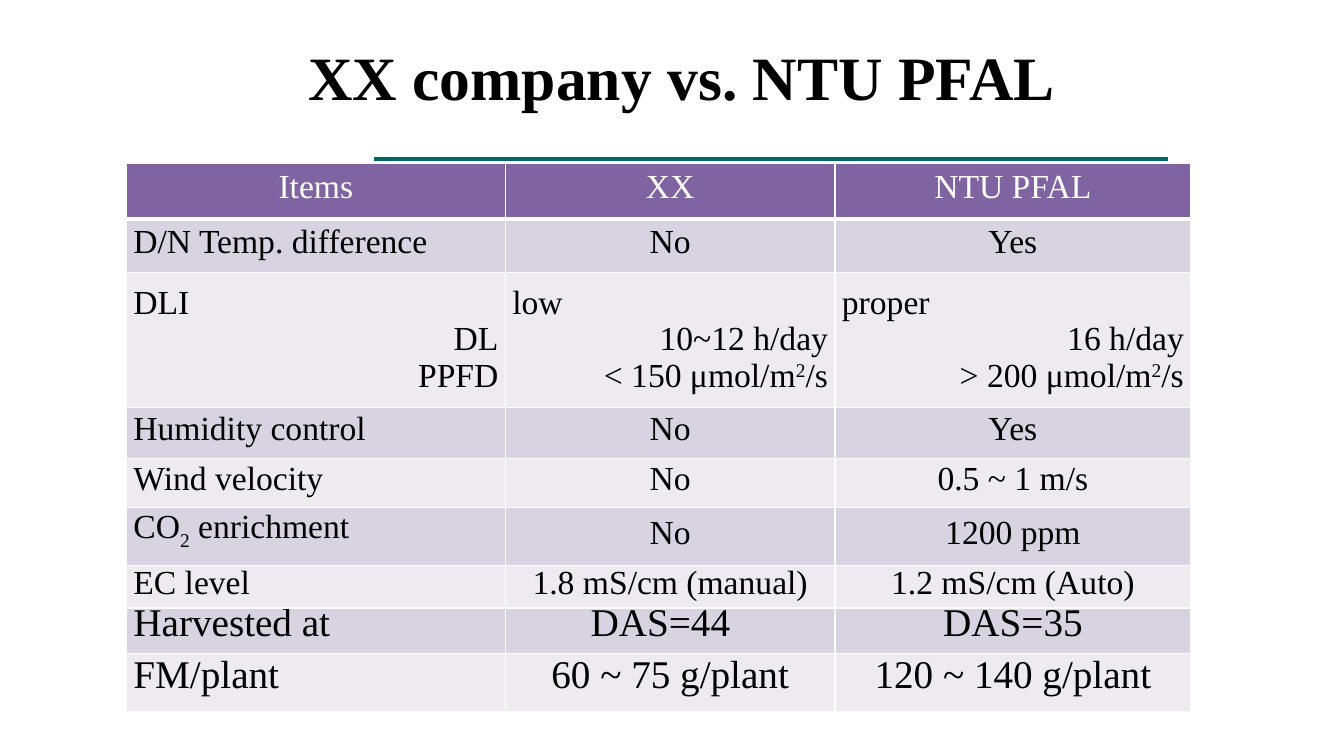
"""Build a slide comparing the growing conditions of XX company and NTU PFAL."""
import itertools

import lxml.etree
import pptx
import pptx.dml.color
import pptx.enum.shapes
import pptx.enum.text
import pptx.oxml
import pptx.oxml.ns
import pptx.util

Pt = pptx.util.Pt
RGBColor = pptx.dml.color.RGBColor
ALIGN = pptx.enum.text.PP_ALIGN
MIDDLE = pptx.enum.text.MSO_ANCHOR.MIDDLE

BLACK = RGBColor(0x00, 0x00, 0x00)
WHITE = RGBColor(0xFF, 0xFF, 0xFF)
TEAL = RGBColor(0x00, 0x66, 0x66)
PURPLE = RGBColor(0x80, 0x64, 0xA2)
LILAC = RGBColor(0xD8, 0xD3, 0xE0)
PALE_LILAC = RGBColor(0xED, 0xEA, 0xF0)

FONT = "Times New Roman"
SHIFTED = {"²": ("2", "30000"), "₂": ("2", "-25000")}
COLUMN_WIDTHS = [270.7, 235.4, 254.2]
ROWS = [
    (39.6, 24, ["Items", "XX", "NTU PFAL"]),
    (38.2, 24, ["D/N Temp. difference", "No", "Yes"]),
    (96.5, 24, ["DLI\nDL\nPPFD",
                "low\n10~12 h/day\n< 150 μmol/m²/s",
                "proper\n16 h/day\n> 200 μmol/m²/s"]),
    (36.7, 24, ["Humidity control", "No", "Yes"]),
    (34.6, 24, ["Wind velocity", "No", "0.5 ~ 1 m/s"]),
    (41.8, 24, ["CO₂ enrichment", "No", "1200 ppm"]),
    (30.2, 24, ["EC level", "1.8 mS/cm (manual)", "1.2 mS/cm (Auto)"]),
    (32.4, 28, ["Harvested at", "DAS=44", "DAS=35"]),
    (41.8, 28, ["FM/plant", "60 ~ 75 g/plant", "120 ~ 140 g/plant"]),
]


def set_values(target, values):
    for name, value in values.items():
        setattr(target, name, value)


def add_border(cell, side, width):
    properties = cell._tc.get_or_add_tcPr()
    properties.append(pptx.oxml.parse_xml(
        f'<a:ln{side} {pptx.oxml.ns.nsdecls("a")} w="{Pt(width)}">'
        f'<a:solidFill><a:srgbClr val="{WHITE}"/></a:solidFill></a:ln{side}>'))


presentation = pptx.Presentation()
set_values(presentation, {"slide_width": Pt(960), "slide_height": Pt(540)})
slide = presentation.slides.add_slide(presentation.slide_layouts[5])

title = slide.shapes.title
set_values(title, {"left": Pt(156.2), "top": Pt(9.4), "width": Pt(661.7), "height": Pt(90)})
title.text_frame.text = "XX company vs. NTU PFAL"
title.text_frame.vertical_anchor = MIDDLE
title_paragraph = title.text_frame.paragraphs[0]
title_paragraph.alignment = ALIGN.CENTER
set_values(title_paragraph.runs[0].font, {"name": FONT, "size": Pt(44), "bold": True})
title_paragraph.runs[0].font.color.rgb = BLACK

rule = slide.shapes.add_connector(
    pptx.enum.shapes.MSO_CONNECTOR.STRAIGHT, Pt(267.1), Pt(113.8), Pt(834.5), Pt(113.8))
rule.line.color.rgb = TEAL
rule.line.width = Pt(3)
lxml.etree.SubElement(rule._element.spPr, pptx.oxml.ns.qn("a:effectLst"))

table = slide.shapes.add_table(
    len(ROWS), len(COLUMN_WIDTHS), Pt(90.3), Pt(116.8),
    Pt(sum(COLUMN_WIDTHS)), Pt(sum(row[0] for row in ROWS))).table
for column, width in zip(table.columns, COLUMN_WIDTHS):
    column.width = Pt(width)

for row_index, (height, size, texts) in enumerate(ROWS):
    table.rows[row_index].height = Pt(height)
    is_header = row_index == 0
    fill_color = PURPLE if is_header else LILAC if row_index % 2 else PALE_LILAC
    for column_index, text in enumerate(texts):
        cell = table.cell(row_index, column_index)
        set_values(cell, {"margin_left": Pt(5), "margin_right": Pt(5), "margin_top": 0,
                          "margin_bottom": 0, "vertical_anchor": MIDDLE})
        for side in "LRTB":
            add_border(cell, side, 3 if is_header and side == "B" else 1)
        cell.fill.solid()
        cell.fill.fore_color.rgb = fill_color

        lines = text.split("\n")
        for line_index, line in enumerate(lines):
            frame = cell.text_frame
            paragraph = frame.add_paragraph() if line_index else frame.paragraphs[0]
            if line_index:
                alignment = ALIGN.RIGHT
            elif len(lines) > 1 or (column_index == 0 and not is_header):
                alignment = ALIGN.JUSTIFY
            else:
                alignment = ALIGN.CENTER
            set_values(paragraph, {"alignment": alignment,
                                   "line_spacing": Pt(26 if len(lines) > 1 else 21)})
            for mark, letters in itertools.groupby(line, SHIFTED.get):
                run = paragraph.add_run()
                run.text = mark[0] if mark else "".join(letters)
                set_values(run.font, {"name": FONT, "size": Pt(size), "bold": False})
                run.font.color.rgb = WHITE if is_header else BLACK
                if mark:
                    run._r.get_or_add_rPr().set("baseline", mark[1])

table.cell(7, 1).margin_right = Pt(19)

presentation.save("out.pptx")
